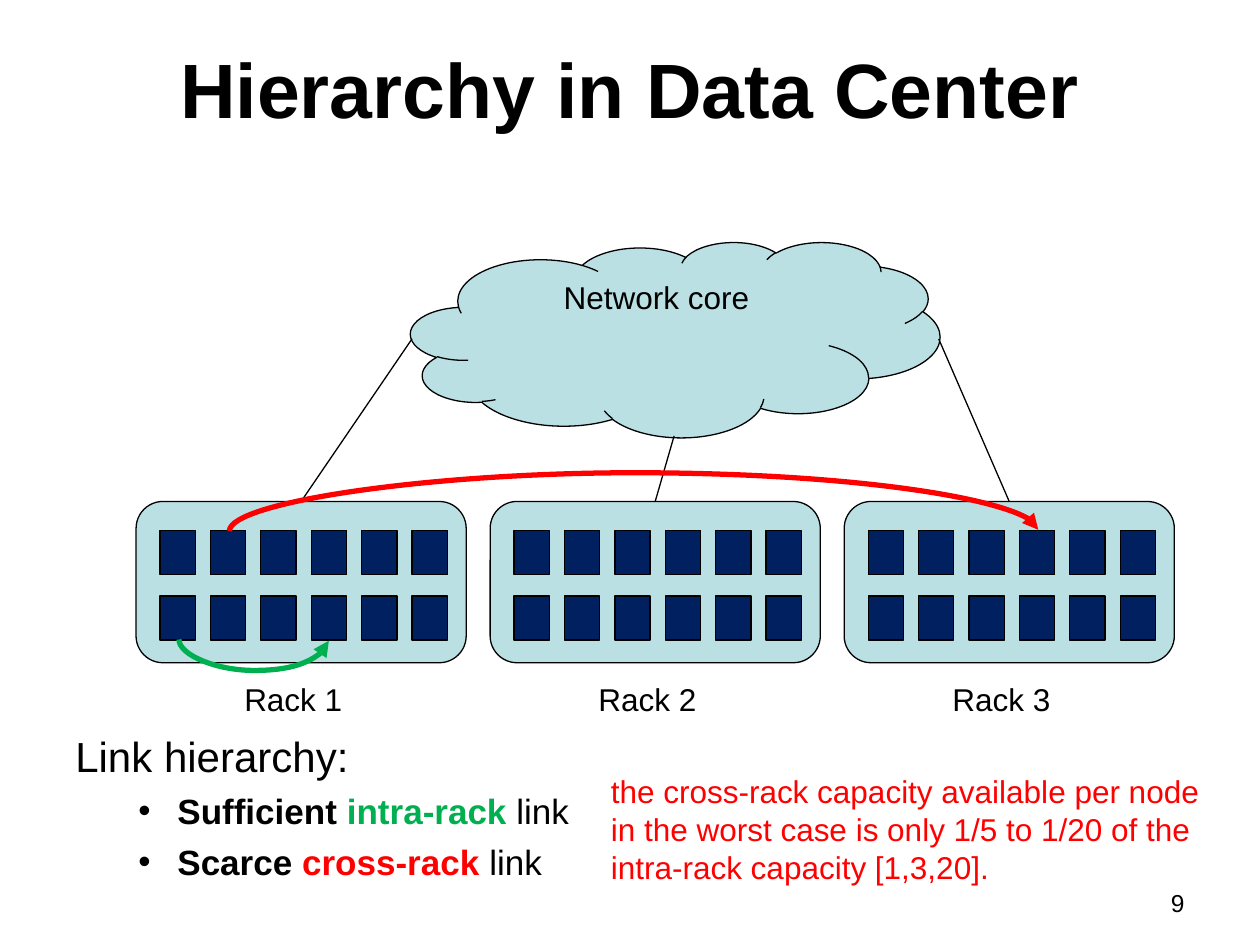
"""Builds the data center hierarchy slide with three racks and a network core."""
from dataclasses import dataclass

from lxml.etree import SubElement
from pptx import Presentation
from pptx.dml.color import RGBColor
from pptx.enum.shapes import MSO_CONNECTOR, MSO_SHAPE
from pptx.enum.text import MSO_ANCHOR, PP_ALIGN
from pptx.oxml.ns import qn
from pptx.util import Inches, Pt


@dataclass(frozen=True)
class Theme:
    font: str = "Arial"
    ink: str = "000000"
    pale: str = "BBE0E3"
    navy: str = "002060"
    green: str = "00B050"
    red: str = "FF0000"
    title: int = 44
    heading: int = 24
    bullet: int = 20
    label: int = 18
    number: int = 14
    thin: float = 0.75
    thick: float = 3


class SlideBuilder:
    def __init__(self, slide, theme):
        self.shapes = slide.shapes
        self.theme = theme

    def style(self, font, size, colour, bold=False):
        font.name = self.theme.font
        font.size = Pt(size)
        font.bold = bold
        font.color.rgb = RGBColor.from_string(colour)

    def text(self, box, lines, size, colour=None, bold=False, align=PP_ALIGN.LEFT,
             anchor=MSO_ANCHOR.TOP):
        frame = self.shapes.add_textbox(*map(Inches, box)).text_frame
        frame.word_wrap = True
        frame.vertical_anchor = anchor
        for index, line in enumerate(lines):
            paragraph = frame.add_paragraph() if index else frame.paragraphs[0]
            paragraph.text = line
            paragraph.alignment = align
            self.style(paragraph.font, size, colour or self.theme.ink, bold)
        return frame

    def bullet(self, frame, lead, key, key_colour, rest):
        paragraph = frame.add_paragraph()
        paragraph.level = 1
        paragraph.space_before = Pt(5)
        properties = paragraph._p.get_or_add_pPr()
        properties.set("marL", str(Inches(0.81)))
        properties.set("indent", str(Inches(-0.31)))
        SubElement(properties, qn("a:buFont"), typeface=self.theme.font)
        SubElement(properties, qn("a:buChar"), char="•")
        ink = self.theme.ink
        for words, colour, bold in ((lead, ink, True), (key, key_colour, True), (rest, ink, False)):
            run = paragraph.add_run()
            run.text = words
            self.style(run.font, self.theme.bullet, colour, bold)

    def shape(self, preset, box, fill, caption=None):
        shape = self.shapes.add_shape(preset, *map(Inches, box))
        shape.shadow.inherit = False
        shape.fill.solid()
        shape.fill.fore_color.rgb = RGBColor.from_string(fill)
        shape.line.color.rgb = RGBColor.from_string(self.theme.ink)
        shape.line.width = Pt(self.theme.thin)
        if caption:
            shape.text_frame.vertical_anchor = MSO_ANCHOR.TOP
            paragraph = shape.text_frame.paragraphs[0]
            paragraph.text = caption
            paragraph.alignment = PP_ALIGN.CENTER
            self.style(paragraph.font, self.theme.label, self.theme.ink)
        return shape

    def connector(self, kind, start, end, colour, width):
        connector = self.shapes.add_connector(kind, *map(Inches, (*start, *end)))
        connector.line.color.rgb = RGBColor.from_string(colour)
        connector.line.width = Pt(width)
        SubElement(connector._element.spPr, qn("a:effectLst"))
        return connector

    def link(self, start, rack):
        top = ((rack.left + rack.width / 2) / Inches(1), rack.top / Inches(1))
        line = self.connector(MSO_CONNECTOR.STRAIGHT, start, top, self.theme.ink, self.theme.thin)
        line.end_connect(rack, 0)

    def arc(self, left, right, y, depth, colour):
        """Draws a curved arrow between two points; positive depth sags downward."""
        thickness = 0.01
        side = 1 if depth > 0 else -1
        middle, reach = (left + right) / 2, side * (right - left) / 2
        curve = self.connector(MSO_CONNECTOR.CURVE, (middle + thickness / 2, y - reach),
                               (middle - thickness / 2, y + reach), colour, self.theme.thick)
        properties = curve._element.spPr
        properties.find(qn("a:xfrm")).set("rot", str((180 + 90 * side) * 60000))
        guides = properties.find(qn("a:prstGeom")).find(qn("a:avLst"))
        bend = round(abs(depth) / thickness * 100000)
        SubElement(guides, qn("a:gd"), name="adj1", fmla=f"val {bend}")
        SubElement(properties.find(qn("a:ln")), qn("a:tailEnd"), type="triangle")

    def rack(self, left, top):
        rack = self.shape(MSO_SHAPE.FLOWCHART_ALTERNATE_PROCESS, (left, top, 2.62, 1.28),
                          self.theme.pale)
        for column in range(6):
            for row in range(2):
                server = (left + 0.19 + 0.4 * column, top + 0.23 + 0.52 * row, 0.28, 0.35)
                self.shape(MSO_SHAPE.FLOWCHART_PROCESS, server, self.theme.navy)
        return rack


def main():
    deck = Presentation()
    deck.slide_width, deck.slide_height = Inches(10), Inches(7.5)
    theme = Theme()
    builder = SlideBuilder(deck.slides.add_slide(deck.slide_layouts[6]), theme)

    builder.text((0.5, 0.3, 9, 0.79), ["Hierarchy in Data Center"], theme.title, bold=True,
                 align=PP_ALIGN.CENTER, anchor=MSO_ANCHOR.MIDDLE)
    builder.text((7.17, 7, 2.33, 0.35), ["9"], theme.number, align=PP_ALIGN.RIGHT)

    rack_lefts = [1.08 + 2.81 * index for index in range(3)]
    racks = [builder.rack(left, 3.98) for left in rack_lefts]
    builder.shape(MSO_SHAPE.CLOUD, (3.26, 1.92, 4.2, 1.55), theme.pale, "Network core")
    for core_exit, rack in zip(((3.27, 2.69), (5.35, 3.46), (7.45, 2.69)), racks):
        builder.link(core_exit, rack)
    for number, left in enumerate(rack_lefts, 1):
        builder.text((left + 0.76, 5.35, 1.11, 0.56), [f"Rack {number}"], theme.label)

    builder.arc(1.42, 2.61, 5.08, 0.25, theme.green)
    builder.arc(1.82, 8.24, 4.21, -0.47, theme.red)

    hierarchy = builder.text((0.5, 5.75, 9, 1.6), ["Link hierarchy:"], theme.heading)
    builder.bullet(hierarchy, "Sufficient ", "intra-rack", theme.green, " link")
    builder.bullet(hierarchy, "Scarce", " cross-rack", theme.red, " link")
    builder.text((4.75, 6.08, 5, 1.01), [
        "the cross-rack capacity available per node in the worst case is only 1/5 to 1/20 of the",
        "intra-rack capacity [1,3,20].",
    ], theme.label, theme.red)

    deck.save("out.pptx")


if __name__ == "__main__":
    main()
